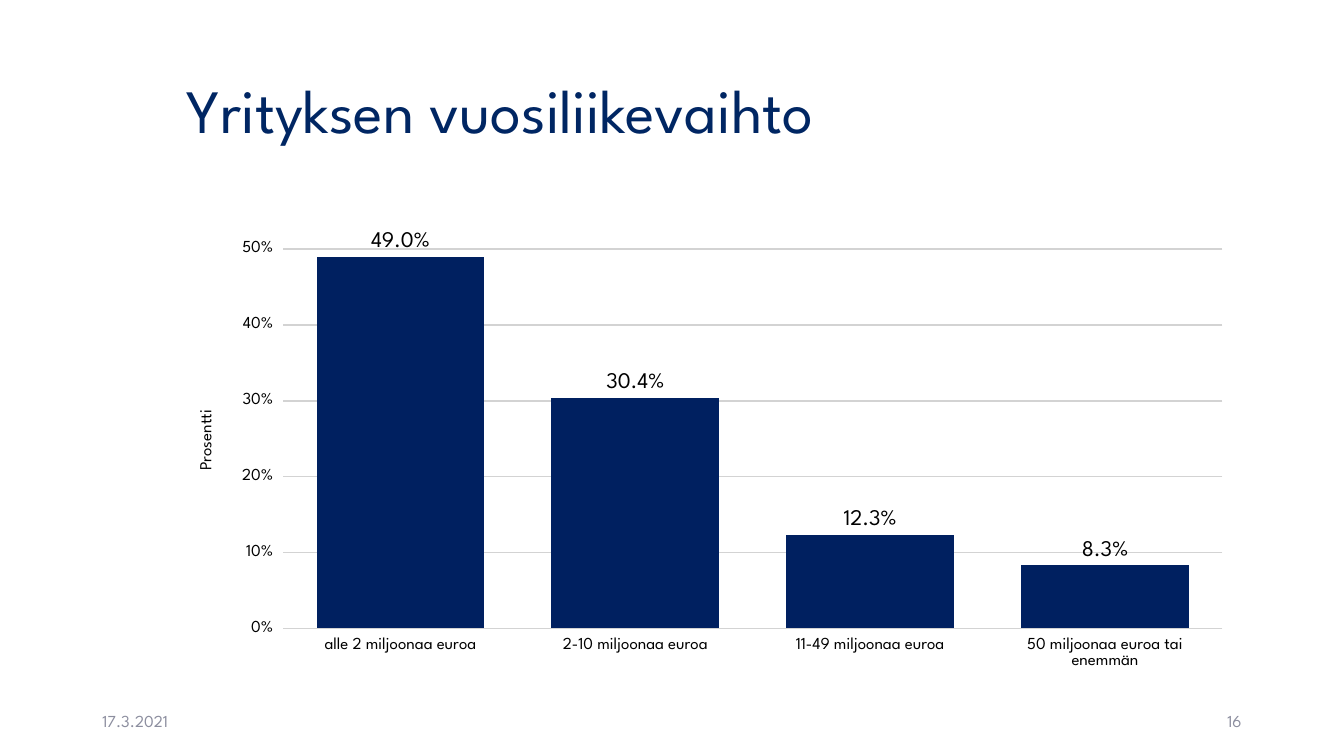
from dataclasses import dataclass

from pptx import Presentation
from pptx.chart.chart import Chart
from pptx.chart.data import CategoryChartData
from pptx.dml.color import RGBColor
from pptx.enum.chart import XL_CHART_TYPE as ChartType
from pptx.enum.chart import XL_LABEL_POSITION as LabelPos
from pptx.enum.chart import XL_TICK_MARK as Tick
from pptx.enum.text import MSO_ANCHOR as Anchor
from pptx.enum.text import PP_ALIGN as Align
from pptx.oxml import parse_xml
from pptx.oxml.ns import nsdecls, qn
from pptx.slide import Slide
from pptx.text.text import Font
from pptx.util import Pt

FONT = "League Spartan"
COLORS = {"title": "002663", "footer": "8C8E9F", "bar": "002060",
          "grid": "D3D3D3", "text": "000000"}
TURNOVER = {
    "alle 2 miljoonaa euroa": 0.49,
    "2-10 miljoonaa euroa": 0.304,
    "11-49 miljoonaa euroa": 0.123,
    "50 miljoonaa euroa tai enemmän": 0.083,
}
PLOT_AREA = {"x": 0.1, "y": 0.02, "w": 0.88, "h": 0.87}


@dataclass
class Label:
    text: str
    left: float
    top: float
    width: float
    height: float
    size: float
    color: str
    align: Align = Align.LEFT
    line_spacing: float = 1.0


LABELS = [
    Label("Yrityksen vuosiliikevaihto", 126, 28.8, 762.5, 104.4, 44, "title",
          line_spacing=0.9),
    Label("17.3.2021", 66, 500.4, 216, 28.8, 12, "footer"),
    Label("16", 678, 500.4, 216, 28.8, 12, "footer", Align.RIGHT),
]


def style_font(font: Font, size: float, color: str) -> None:
    font.name = FONT
    font.size = Pt(size)
    font.bold = False
    font.color.rgb = RGBColor.from_string(COLORS[color])


def add_label(s: Slide, label: Label) -> None:
    box = s.shapes.add_textbox(Pt(label.left), Pt(label.top),
                               Pt(label.width), Pt(label.height))
    tf = box.text_frame
    tf.word_wrap = True
    tf.vertical_anchor = Anchor.MIDDLE
    tf.text = label.text
    p = tf.paragraphs[0]
    p.alignment = label.align
    p.line_spacing = label.line_spacing
    style_font(p.runs[0].font, label.size, label.color)


def place_plot_area(chart: Chart) -> None:
    """Fix the inner plot area as fractions of the chart."""
    plot_area = chart.plots[0]._element.getparent()
    for old in plot_area.findall(qn("c:layout")):
        plot_area.remove(old)
    modes = "".join(f'<c:{k}Mode val="edge"/>' for k in "xy")
    sizes = "".join(f'<c:{k} val="{v}"/>' for k, v in PLOT_AREA.items())
    plot_area.insert(0, parse_xml(
        f'<c:layout {nsdecls("c")}><c:manualLayout>'
        f'<c:layoutTarget val="inner"/>{modes}{sizes}'
        '</c:manualLayout></c:layout>'))


def style_axes(chart: Chart) -> None:
    for axis in (chart.category_axis, chart.value_axis):
        axis.major_tick_mark = Tick.OUTSIDE
        axis.minor_tick_mark = Tick.NONE
        axis.format.line.fill.background()
        style_font(axis.tick_labels.font, 12, "text")

    values = chart.value_axis
    values.minimum_scale, values.maximum_scale = 0, 0.55
    values.major_unit = 0.1
    values.tick_labels.number_format = "0%"
    values.tick_labels.number_format_is_linked = False
    values.has_major_gridlines = True
    grid = values.major_gridlines.format.line
    grid.width = Pt(1)
    grid.color.rgb = RGBColor.from_string(COLORS["grid"])

    tf = values.axis_title.text_frame
    tf.text = "Prosentti"
    style_font(tf.paragraphs[0].runs[0].font, 12, "text")
    tf._txBody.bodyPr.set("rot", "-5400000")
    tf._txBody.bodyPr.set("vert", "horz")


def add_turnover_chart(s: Slide) -> None:
    data = CategoryChartData(number_format="0.0%")
    data.categories = list(TURNOVER)
    data.add_series("Series 1", list(TURNOVER.values()))
    chart = s.shapes.add_chart(ChartType.COLUMN_CLUSTERED, Pt(126), Pt(144),
                               Pt(762.5), Pt(342.7), data).chart
    chart.has_legend = False
    chart.has_title = False
    style_font(chart.font, 11, "text")

    plot = chart.plots[0]
    plot.gap_width = 40
    plot.vary_by_categories = False
    fill = plot.series[0].format.fill
    fill.solid()
    fill.fore_color.rgb = RGBColor.from_string(COLORS["bar"])

    labels = plot.series[0].data_labels
    labels.show_value = True
    labels.position = LabelPos.OUTSIDE_END
    labels.number_format = "0.0%"
    labels.number_format_is_linked = False
    style_font(labels.font, 16, "text")

    style_axes(chart)
    place_plot_area(chart)


def main() -> None:
    prs = Presentation()
    prs.slide_width, prs.slide_height = Pt(960), Pt(540)
    s = prs.slides.add_slide(prs.slide_layouts[6])
    for label in LABELS:
        add_label(s, label)
    add_turnover_chart(s)
    prs.save("out.pptx")


if __name__ == "__main__":
    main()
